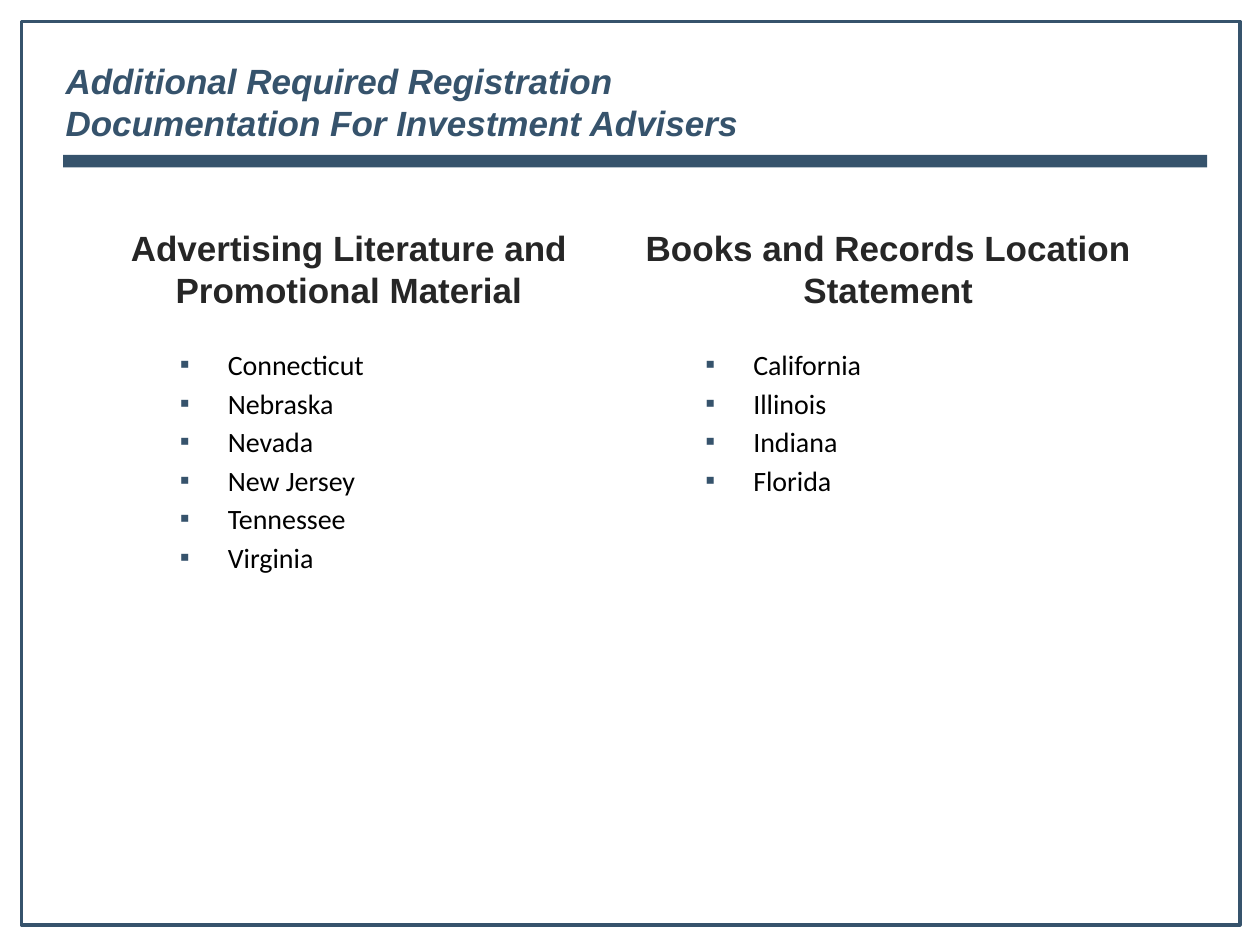
from lxml import etree
from pptx import Presentation
from pptx.dml.color import RGBColor
from pptx.enum.shapes import MSO_SHAPE
from pptx.enum.text import MSO_ANCHOR, PP_ALIGN
from pptx.oxml.ns import qn
from pptx.util import Inches, Pt

RECTANGLE = MSO_SHAPE.RECTANGLE
TOP = MSO_ANCHOR.TOP
LEFT, CENTER = PP_ALIGN.LEFT, PP_ALIGN.CENTER

BLUE = RGBColor(0x36, 0x53, 0x6C)
CHARCOAL = RGBColor(0x26, 0x26, 0x26)
BLACK = RGBColor(0, 0, 0)

TITLE = "Additional Required Registration Documentation For Investment Advisers"
COLUMNS = [
    ("Advertising Literature and Promotional Material",
     ["Connecticut", "Nebraska", "Nevada", "New Jersey", "Tennessee", "Virginia"]),
    ("Books and Records Location Statement",
     ["California", "Illinois", "Indiana", "Florida"]),
]
HEADING_LEFT, HEADING_STEP = 0.5, 4.28
LIST_LEFT, LIST_STEP = 1.33, 4.17
INDENT = Inches(0.38)


def format_text(paragraph, font_name, size, color, bold=False, italic=False):
    for run in paragraph.runs:
        font = run.font
        font.name, font.size = font_name, Pt(size)
        font.bold, font.italic = bold, italic
        font.color.rgb = color


def add_square_bullet(paragraph):
    properties = paragraph._p.get_or_add_pPr()
    properties.set("marL", str(INDENT))
    properties.set("indent", str(-INDENT))
    bullet_color = etree.SubElement(properties, qn("a:buClr"))
    etree.SubElement(bullet_color, qn("a:srgbClr"), val=str(BLUE))
    etree.SubElement(properties, qn("a:buFont"), typeface="Arial")
    etree.SubElement(properties, qn("a:buChar"), char="▪")


presentation = Presentation()
presentation.slide_width, presentation.slide_height = Inches(10), Inches(7.5)
slide = presentation.slides.add_slide(presentation.slide_layouts[5])

# Rule under the title and frame around the slide
rule = slide.shapes.add_shape(
    RECTANGLE, Inches(0.5), Inches(1.23), Inches(9.08), Inches(0.1))
rule.shadow.inherit = False
rule.fill.solid()
rule.fill.fore_color.rgb = BLUE
rule.line.fill.background()

frame = slide.shapes.add_shape(
    RECTANGLE, Inches(0.17), Inches(0.17), Inches(9.67), Inches(7.17))
frame.shadow.inherit = False
frame.fill.background()
frame.line.color.rgb = BLUE
frame.line.width = Pt(2)

title = slide.shapes.title
title.left, title.top = Inches(0.42), Inches(0.42)
title.width, title.height = Inches(5.92), Inches(0.77)
title.text_frame.text = TITLE
title.text_frame.vertical_anchor = TOP
title_paragraph = title.text_frame.paragraphs[0]
title_paragraph.alignment = LEFT
format_text(title_paragraph, "Arial", 20, BLUE, bold=True, italic=True)

# One heading and one list of states per column
for column, (heading, states) in enumerate(COLUMNS):
    heading_box = slide.shapes.add_textbox(
        Inches(HEADING_LEFT + column * HEADING_STEP), Inches(1.75),
        Inches(4.54), Inches(0.77))
    heading_box.text_frame.word_wrap = True
    heading_box.text_frame.text = heading
    heading_paragraph = heading_box.text_frame.paragraphs[0]
    heading_paragraph.alignment = CENTER
    format_text(heading_paragraph, "Arial", 20, CHARCOAL, bold=True)

    list_box = slide.shapes.add_textbox(
        Inches(LIST_LEFT + column * LIST_STEP), Inches(2.71),
        Inches(4.42), Inches(4.32))
    list_box.text_frame.word_wrap = True
    list_box.text_frame.text = "\n".join(states)
    for paragraph in list_box.text_frame.paragraphs:
        paragraph.space_after = Pt(2.8)
        add_square_bullet(paragraph)
        format_text(paragraph, "Calibri", 16, BLACK)

presentation.save("out.pptx")
